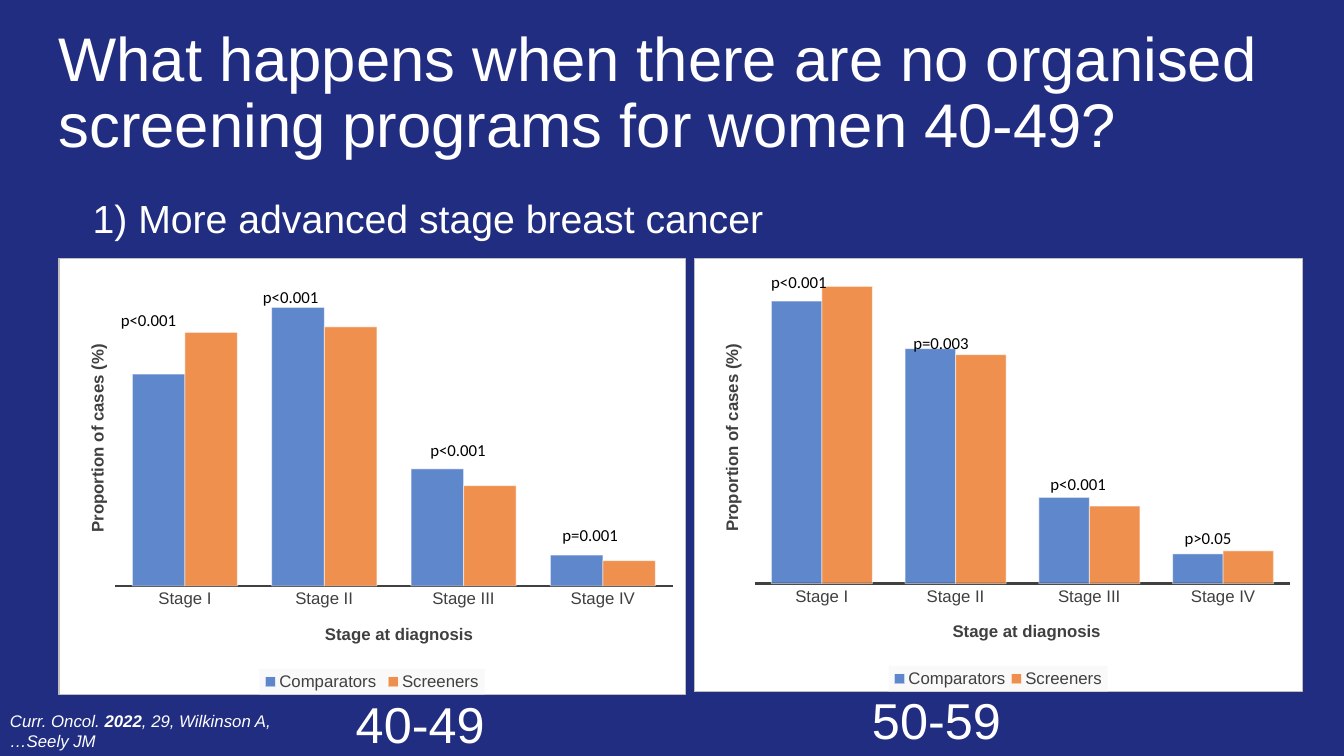
import pptx
import pptx.util
import pptx.chart.data
import pptx.dml.color
import pptx.enum.chart
import pptx.enum.text
import pptx.oxml
import pptx.oxml.ns
from dataclasses import dataclass
from lxml import etree

SCALE = 9144  # EMU per px, 100 px to the inch
WHITE, GREY, BLACK = "FFFFFF", "404040", "000000"
STAGES = ["Stage I", "Stage II", "Stage III", "Stage IV"]
HUES = ["4472C4", "ED7D31"]
Box = tuple[int, int, int, int]


@dataclass
class Plot:
    box: Box
    area: tuple[float, float, float, float]
    comp: list[int]
    screen: list[int]
    grid: bool


@dataclass
class Label:
    text: str
    box: Box
    size: int = 12
    face: str = "Calibri"
    hue: str = BLACK


PLOTS = [
    Plot((688, 256, 604, 431), (0.1, 0.03, 0.88, 0.72),
         [95, 79, 29, 10], [100, 77, 26, 11], True),
    Plot((58, 256, 622, 434), (0.09, 0.08, 0.89, 0.67),
         [76, 100, 42, 11], [91, 93, 36, 9], False),
]

LABELS = [
    Label("p<0.001", (110, 302, 76, 30)),
    Label("p<0.001", (251, 280, 76, 30)),
    Label("p<0.001", (417, 431, 76, 30)),
    Label("p=0.001", (548, 516, 158, 30)),
    Label("p<0.001", (755, 265, 76, 30)),
    Label("p=0.003", (896, 325, 76, 30)),
    Label("p<0.001", (1032, 465, 76, 30)),
    Label("p>0.05", (1165, 519, 67, 30)),
    Label("40-49", (343, 683, 158, 71), 36, "Arial", WHITE),
    Label("50-59", (855, 679, 158, 71), 36, "Arial", WHITE),
]


def px(n: int) -> int:
    return pptx.util.Emu(n * SCALE)


def rgb(code: str) -> pptx.dml.color.RGBColor:
    return pptx.dml.color.RGBColor.from_string(code)


def style(font, size: int, hue: str, face: str = "Arial") -> None:
    font.size = pptx.util.Pt(size)
    font.name = face
    font.color.rgb = rgb(hue)


def text(slide, item: Label):
    shape = slide.shapes.add_textbox(*map(px, item.box))
    frame = shape.text_frame
    frame.word_wrap = True
    frame.text = item.text
    style(frame.paragraphs[0].runs[0].font, item.size, item.hue, item.face)
    return frame


# Chart parts that need XML
def place(node, spot: int, **vals: float) -> None:
    """Give a chart part a manual layout as child number spot."""
    qn = pptx.oxml.ns.qn
    for old in node.findall(qn("c:layout")):
        node.remove(old)
    layout = etree.Element(qn("c:layout"))
    manual = etree.SubElement(layout, qn("c:manualLayout"))
    if "inner" in vals:
        etree.SubElement(manual, qn("c:layoutTarget")).set("val", "inner")
    for key in ("xMode", "yMode"):
        etree.SubElement(manual, qn("c:" + key)).set("val", "edge")
    for key in ("x", "y", "w", "h"):
        if key in vals:
            etree.SubElement(manual, qn("c:" + key)).set("val", str(vals[key]))
    node.insert(spot, layout)


def panel(node, fill: str, alpha: int, edge: str = "") -> None:
    """Add a fill and an optional border after a chart part."""
    names = pptx.oxml.ns.nsdecls("c", "a")
    line = (f'<a:ln w="9525"><a:solidFill><a:srgbClr val="{edge}"/></a:solidFill></a:ln>'
            if edge else "<a:ln><a:noFill/></a:ln>")
    node.addnext(pptx.oxml.parse_xml(
        f'<c:spPr {names}><a:solidFill><a:srgbClr val="{fill}">'
        f'<a:alpha val="{alpha}000"/></a:srgbClr></a:solidFill>{line}</c:spPr>'))


def name(axis, words: str, x: float, y: float) -> None:
    title = axis.axis_title
    title.text_frame.text = words
    font = title.text_frame.paragraphs[0].runs[0].font
    style(font, 12, GREY)
    font.bold = True
    place(title._element, 1, x=x, y=y)


def graph(slide, item: Plot) -> None:
    qn = pptx.oxml.ns.qn
    data = pptx.chart.data.CategoryChartData()
    data.categories = STAGES
    data.add_series("Comparators", item.comp)
    data.add_series("Screeners", item.screen)
    kind = pptx.enum.chart.XL_CHART_TYPE.COLUMN_CLUSTERED
    chart = slide.shapes.add_chart(kind, *map(px, item.box), data).chart
    chart.has_title = False
    style(chart.font, 10, BLACK)
    root = chart._chartSpace.find(qn("c:chart"))
    panel(root, WHITE, 100, "BFBFBF")
    x, y, w, h = item.area
    place(root.find(qn("c:plotArea")), 0, inner=1, x=x, y=y, w=w, h=h)

    # Bars
    plot = chart.plots[0]
    plot.gap_width, plot.overlap = 65, 0
    plot.vary_by_categories = False
    for series, hue in zip(plot.series, HUES):
        form = series.format
        form.fill.solid()
        form.fill.fore_color.rgb = rgb(hue)
        form.line.color.rgb = rgb(WHITE)
        form.line.width = pptx.util.Pt(0.75)
        tints = series._element.spPr.iter(qn("a:srgbClr"))
        for tint, alpha in zip(list(tints), (85, 50)):
            etree.SubElement(tint, qn("a:alpha")).set("val", f"{alpha}000")

    # Axes
    cat, val = chart.category_axis, chart.value_axis
    cat.major_tick_mark = pptx.enum.chart.XL_TICK_MARK.NONE
    style(cat.tick_labels.font, 12, GREY)
    cat.format.line.color.rgb = rgb(GREY)
    cat.format.line.width = pptx.util.Pt(1.5)
    name(cat, "Stage at diagnosis", 0.42, 0.83)
    val.minimum_scale, val.maximum_scale = 0, 105
    val.has_major_gridlines = item.grid
    if item.grid:
        line = val.major_gridlines.format.line
        line.color.rgb = rgb(WHITE)
        line.width = pptx.util.Pt(0.75)
    name(val, "Proportion of cases (%)", 0.04, 0.19)
    body = val.axis_title._element.find(".//" + qn("a:bodyPr"))
    body.set("rot", "-5400000")
    body.set("vert", "horz")
    val.visible = False

    # Legend
    chart.has_legend = True
    legend = chart.legend
    legend.position = pptx.enum.chart.XL_LEGEND_POSITION.BOTTOM
    legend.include_in_layout = False
    style(legend.font, 12, GREY)
    place(legend._element, 1, x=0.32, y=0.94, w=0.36, h=0.06)
    panel(legend._element.find(qn("c:overlay")), "F2F2F2", 39)


def main() -> None:
    deck = pptx.Presentation()
    deck.slide_width, deck.slide_height = px(1333), px(750)
    slide = deck.slides.add_slide(deck.slide_layouts[5])
    slide.background.fill.solid()
    slide.background.fill.fore_color.rgb = rgb("212D80")

    # Title
    title = slide.shapes.title
    title.left, title.top, title.width, title.height = map(px, (58, 16, 1358, 144))
    frame = title.text_frame
    frame.text = "What happens when there are no organised screening programs for women 40-49?"
    frame.word_wrap = True
    frame.auto_size = pptx.enum.text.MSO_AUTO_SIZE.NONE
    frame.vertical_anchor = pptx.enum.text.MSO_ANCHOR.BOTTOM
    frame.margin_left = frame.margin_right = frame.margin_top = frame.margin_bottom = 0
    para = frame.paragraphs[0]
    para.alignment = pptx.enum.text.PP_ALIGN.LEFT
    para.line_spacing = 0.9
    style(para.runs[0].font, 44, WHITE)

    # Body and source
    point = Label("1) More advanced stage breast cancer", (82, 142, 1129, 517), 28, "Arial", WHITE)
    frame = text(slide, point)
    frame.margin_top = px(56)
    frame.paragraphs[0].line_spacing = 0.9
    frame = text(slide, Label("Curr. Oncol. ", (0, 700, 279, 50), 12, "Arial", WHITE))
    para = frame.paragraphs[0]
    for part in ("2022", ", 29, Wilkinson A, …Seely JM"):
        para.add_run().text = part
    for run in para.runs:
        style(run.font, 12, WHITE)
        run.font.italic = True
        run.font.bold = run.text == "2022"

    # Charts and their labels
    for item in PLOTS:
        graph(slide, item)
    for item in LABELS:
        text(slide, item)
    deck.save("out.pptx")


if __name__ == "__main__":
    main()
